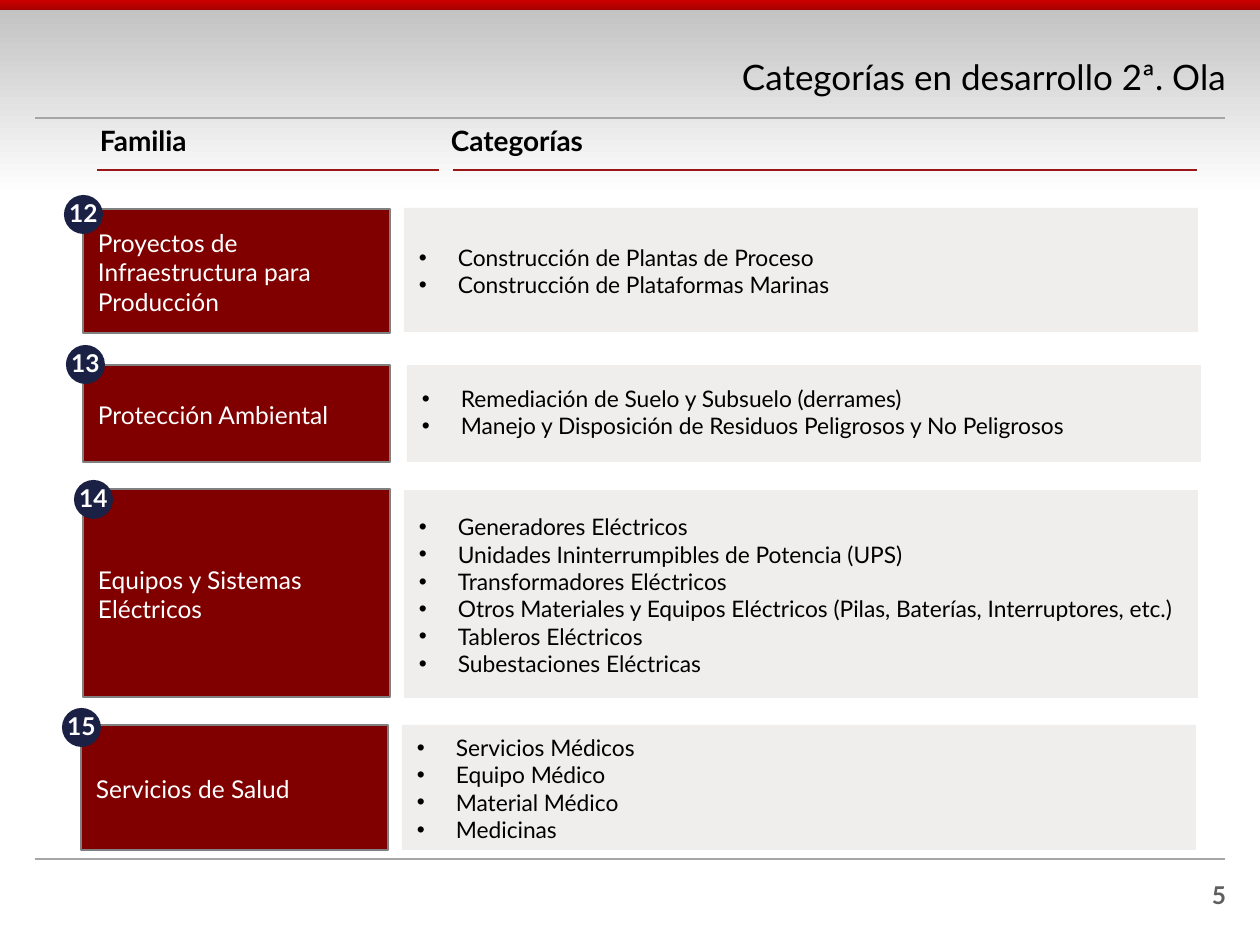
"""Build the slide of second-wave families and their categories."""
from lxml.etree import SubElement
from pptx import Presentation
from pptx.dml.color import RGBColor
from pptx.enum.shapes import MSO_CONNECTOR, MSO_SHAPE
from pptx.enum.text import MSO_ANCHOR as ANCHOR, MSO_AUTO_SIZE, PP_ALIGN as ALIGN
from pptx.oxml.ns import qn
from pptx.util import Pt

COLORS = {
    "black": "000000", "white": "FFFFFF", "silver": "C0C0C0", "red": "CC0000",
    "dark_red": "A80000", "rule": "A6A6A6", "accent": "9B1717", "panel": "EFEEEC",
    "maroon": "800000", "border": "808080", "navy": "1B2045", "number": "5F5F5F",
}
FONT = "Lato"
TITLE = "Categorías en desarrollo 2ª. Ola"
PAGE_NUMBER = "5"
BANDS = [(195, "silver", "white"), (10, "red", "dark_red")]
HEADINGS = [("Familia", 100, 302), ("Categorías", 451, 665)]
RULES = [(35, 1225, 859, "rule"), (35, 1225, 118, "rule"),
         (453, 1197, 170, "accent"), (97, 439, 170, "accent")]
FAMILIES = [
    {"number": "12", "name": "Proyectos de Infraestructura para Producción",
     "family": (83, 209), "panel": (404, 208), "badge": (64, 195), "height": 124, "inset": 10,
     "items": ["Construcción de Plantas de Proceso", "Construcción de Plataformas Marinas"]},
    {"number": "13", "name": "Protección Ambiental",
     "family": (83, 365), "panel": (407, 365), "badge": (66, 345), "height": 97, "inset": 5,
     "items": ["Remediación de Suelo y Subsuelo (derrames)",
               "Manejo y Disposición de Residuos Peligrosos y No Peligrosos"]},
    {"number": "14", "name": "Equipos y Sistemas Eléctricos",
     "family": (83, 489), "panel": (404, 490), "badge": (74, 480), "height": 208, "inset": 10,
     "items": ["Generadores Eléctricos", "Unidades Ininterrumpibles de Potencia (UPS)",
               "Transformadores Eléctricos",
               "Otros Materiales y Equipos Eléctricos (Pilas, Baterías, Interruptores, etc.)",
               "Tableros Eléctricos", "Subestaciones Eléctricas"]},
    {"number": "15", "name": "Servicios de Salud",
     "family": (81, 725), "panel": (402, 725), "badge": (62, 708), "height": 125, "inset": 10,
     "items": ["Servicios Médicos", "Equipo Médico", "Material Médico", "Medicinas"]},
]
FAMILY_WIDTH, PANEL_WIDTH, BADGE_SIZE, INDENT = 307, 794, 39, 39
PADDING = (15, 10, 10, 8)


def px(length):
    return round(length * 914400 / 126)


def color(name):
    return RGBColor.from_string(COLORS[name])


def write(box, lines, size, ink, bold=False, align=ALIGN.LEFT, spacing=1.0,
          anchor=ANCHOR.MIDDLE, insets=(0, 0, 0, 0), wrap=True, bullets=False):
    frame = box.text_frame
    frame.text = "\n".join(lines)
    frame.word_wrap = wrap
    frame.auto_size = MSO_AUTO_SIZE.NONE
    frame.vertical_anchor = anchor
    frame.margin_left, frame.margin_top, frame.margin_right, frame.margin_bottom = map(px, insets)
    for para in frame.paragraphs:
        para.alignment = align
        para.line_spacing = spacing
        if bullets:
            properties = para._p.get_or_add_pPr()
            properties.set("marL", str(px(INDENT)))
            properties.set("indent", str(-px(INDENT)))
            SubElement(properties, qn("a:buFont"), typeface="Arial")
            SubElement(properties, qn("a:buChar"), char="•")
        font = para.font
        font.name, font.size, font.bold = FONT, Pt(size), bold
        font.color.rgb = color(ink)


def add_shape(page, kind, left, top, width, height, fill=None, border=None):
    shape = page.shapes.add_shape(kind, px(left), px(top), px(width), px(height))
    shape.shadow.inherit = False
    if fill:
        shape.fill.solid()
        shape.fill.fore_color.rgb = color(fill)
    if border:
        shape.line.color.rgb = color(border)
        shape.line.width = Pt(1)
    else:
        shape.line.fill.background()
    return shape


def add_textbox(page, left, top, width, height):
    return page.shapes.add_textbox(px(left), px(top), px(width), px(height))


def add_header(page):
    title = page.shapes.title
    title.left, title.top, title.width, title.height = px(258), px(43), px(968), px(72)
    write(title, [TITLE], 20, "black", align=ALIGN.RIGHT, spacing=0.9)
    for height, start, end in BANDS:
        band = add_shape(page, MSO_SHAPE.RECTANGLE, 0, 0, 1260, height)
        band.fill.gradient()
        band.fill.gradient_angle = 270
        for stop, name in zip(band.fill.gradient_stops, (start, end)):
            stop.color.rgb = color(name)
        title.element.addprevious(band.element)
    for text, left, width in HEADINGS:
        write(add_textbox(page, left, 127, width, 30), [text], 16, "black", bold=True,
              spacing=0.9, anchor=ANCHOR.TOP)


def add_rules(page):
    for start, end, top, name in RULES:
        rule = page.shapes.add_connector(MSO_CONNECTOR.STRAIGHT, px(start), px(top), px(end), px(top))
        rule.line.color.rgb = color(name)
        rule.line.width = Pt(0.75)
        SubElement(rule.element.spPr, qn("a:effectLst"))


def add_family(page, row):
    panel = add_shape(page, MSO_SHAPE.RECTANGLE, *row["panel"], PANEL_WIDTH, row["height"], "panel")
    write(panel, row["items"], 13, "black", bullets=True,
          insets=(PADDING[0], row["inset"], *PADDING[2:]))
    family = add_shape(page, MSO_SHAPE.RECTANGLE, *row["family"], FAMILY_WIDTH, row["height"],
                       "maroon", "border")
    write(family, [row["name"]], 14, "white", insets=PADDING)
    badge = add_shape(page, MSO_SHAPE.OVAL, *row["badge"], BADGE_SIZE, BADGE_SIZE, "navy")
    write(badge, [row["number"]], 14, "white", bold=True, align=ALIGN.CENTER,
          spacing=0.9, wrap=False)


def main():
    deck = Presentation()
    deck.slide_width, deck.slide_height = px(1260), px(945)
    page = deck.slides.add_slide(deck.slide_layouts[5])
    add_header(page)
    add_rules(page)
    for row in FAMILIES:
        add_family(page, row)
    write(add_textbox(page, 932, 874, 294, 40), [PAGE_NUMBER], 14, "number", bold=True,
          align=ALIGN.RIGHT, anchor=ANCHOR.TOP, insets=(13, 6, 0, 6))
    deck.save("out.pptx")


if __name__ == "__main__":
    main()
